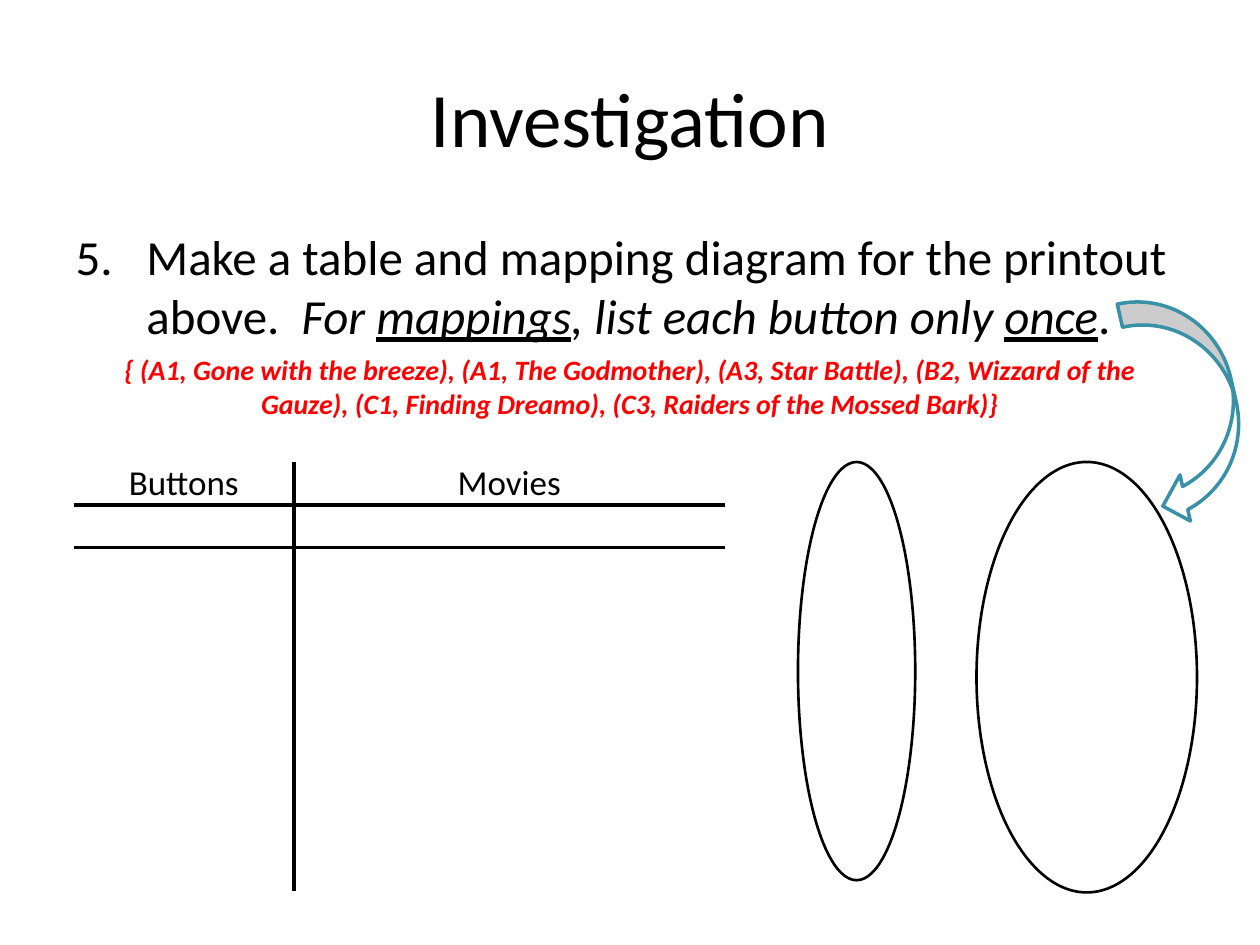
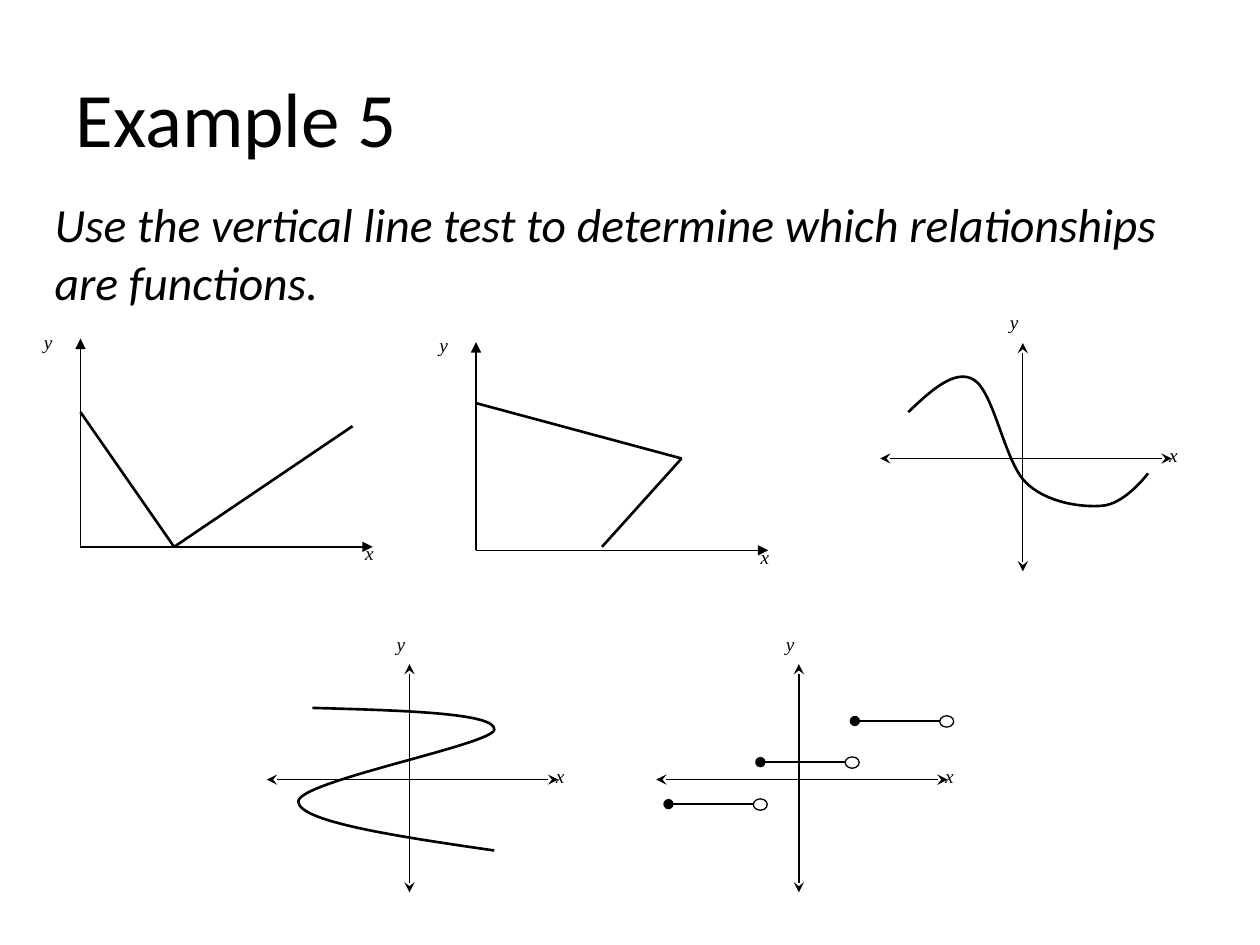
import pptx
import pptx.dml.color
import pptx.enum.shapes
import pptx.enum.text
import pptx.oxml
import pptx.oxml.ns
import pptx.util

Pt = pptx.util.Pt
RGB = pptx.dml.color.RGBColor.from_string
qn = pptx.oxml.ns.qn
SubElement = pptx.oxml.xmlchemy.OxmlElement
ALIGN = pptx.enum.text.PP_ALIGN
SHAPE = pptx.enum.shapes.MSO_SHAPE

COLORS = {"ink": "000000", "paper": "FFFFFF", "answer": "FF0000", "arrow": "3891A7"}
FONT = "Calibri"
MATH_FONT = "Times New Roman"


def add_line(s, x1, y1, x2, y2, width=0.75, head=None, tail=None):
    cn = s.shapes.add_connector(pptx.enum.shapes.MSO_CONNECTOR.STRAIGHT,
                                Pt(x1), Pt(y1), Pt(x2), Pt(y2))
    cn.line.width = Pt(width)
    cn.line.color.rgb = RGB(COLORS["ink"])
    ln = cn.line._get_or_add_ln()
    for tag, kind in (("a:headEnd", head), ("a:tailEnd", tail)):
        if kind:
            end = SubElement(tag)
            end.set("type", kind)
            ln.append(end)
    cn._element.spPr.append(SubElement("a:effectLst"))


def format_runs(p, size, font=FONT, color="ink", italic=None, bold=None):
    for r in p.runs:
        r.font.size = Pt(size)
        r.font.name = font
        r.font.color.rgb = RGB(COLORS[color])
        r.font.italic = italic
        r.font.bold = bold


prs = pptx.Presentation()
prs.slide_width, prs.slide_height = Pt(720), Pt(540)

# Shared title and body placeholders
slides = []
for title, align, body_box in (
    ("Investigation", ALIGN.CENTER, (36, 126, 648, 336)),
    ("Example 5", ALIGN.LEFT, (24, 108, 678, 60)),
):
    s = prs.slides.add_slide(prs.slide_layouts[1])
    s.shapes.title.text_frame.text = title
    body = s.placeholders[1]
    for sp, box in ((s.shapes.title, (36, 21.6, 648, 90)), (body, body_box)):
        sp.left, sp.top, sp.width, sp.height = [Pt(v) for v in box]
        sp.text_frame.auto_size = pptx.enum.text.MSO_AUTO_SIZE.NONE
    p = s.shapes.title.text_frame.paragraphs[0]
    p.alignment = align
    format_runs(p, 44)
    slides.append((s, body))

# Slide 1: numbered task
s, body = slides[0]
p = body.text_frame.paragraphs[0]
for text, italic, underline in (
    ("Make a table and mapping diagram for the printout above.  ", False, False),
    ("For ", True, False),
    ("mappings", True, True),
    (", list each button only ", True, False),
    ("once", True, True),
    (".", False, False),
):
    r = p.add_run()
    r.text = text
    r.font.underline = underline
format_runs(p, 28)
for r in p.runs[1:-1]:
    r.font.italic = True
pPr = p._p.get_or_add_pPr()
pPr.set("marL", str(Pt(40.5)))
pPr.set("indent", str(-Pt(40.5)))
bullet = SubElement("a:buFont")
bullet.set("typeface", "+mj-lt")
pPr.append(bullet)
bullet = SubElement("a:buAutoNum")
bullet.set("type", "arabicPeriod")
bullet.set("startAt", "5")
pPr.append(bullet)

# Empty mapping ovals
for x, w, h in ((456, 67, 239), (558, 126, 246)):
    sp = s.shapes.add_shape(SHAPE.OVAL, Pt(x), Pt(264), Pt(w), Pt(h))
    sp.shadow.inherit = False
    sp.fill.solid()
    sp.fill.fore_color.rgb = RGB(COLORS["paper"])
    sp.line.color.rgb = RGB(COLORS["ink"])
    sp.line.width = Pt(1.5)

# Buttons and movies table, ruled under the first two rows and between columns
ROWS, ROW_H = 10, 24.5
table = s.shapes.add_table(ROWS, 2, Pt(42), Pt(264), Pt(372), Pt(ROWS * ROW_H)).table
table.first_row = table.horz_banding = False
for col, width in zip(table.columns, (126, 246)):
    col.width = Pt(width)
for i, row in enumerate(table.rows):
    row.height = Pt(ROW_H)
    for j, cell in enumerate(row.cells):
        cell.margin_left = cell.margin_right = Pt(5)
        cell.margin_top = cell.margin_bottom = 0
        tcPr = cell._tc.get_or_add_tcPr()
        for side, ruled in (("L", j == 1), ("R", j == 0), ("T", i in (1, 2)), ("B", i in (0, 1))):
            ln = SubElement("a:ln" + side)
            ln.set("w", str(Pt(2.25)))
            fill = SubElement("a:solidFill" if ruled else "a:noFill")
            if ruled:
                clr = SubElement("a:srgbClr")
                clr.set("val", COLORS["ink"])
                fill.append(clr)
            ln.append(fill)
            tcPr.append(ln)
        cell.fill.background()
for cell, text in zip(table.rows[0].cells, ("Buttons", "Movies")):
    cell.text_frame.text = text
    p = cell.text_frame.paragraphs[0]
    p.alignment = ALIGN.CENTER
    format_runs(p, 20)

# Printout pairs
sp = s.shapes.add_textbox(Pt(60), Pt(198), Pt(600), Pt(68))
sp.text_frame.word_wrap = True
p = sp.text_frame.paragraphs[0]
p.text = ("{ (A1, Gone with the breeze), (A1, The Godmother), (A3, Star Battle), "
          "(B2, Wizzard of the Gauze), (C1, Finding Dreamo), "
          "(C3, Raiders of the Mossed Bark)}")
p.alignment = ALIGN.CENTER
p.space_before = Pt(3.2)
format_runs(p, 16, color="answer", italic=True, bold=True)

# Arrow from the hint to the ovals
sp = s.shapes.add_shape(SHAPE.CURVED_LEFT_ARROW, Pt(652.3), Pt(166.3), Pt(54), Pt(131.8))
sp.rotation = 347.3
sp.shadow.inherit = False
sp.fill.solid()
sp.fill.fore_color.rgb = RGB(COLORS["paper"])
sp.line.color.rgb = RGB(COLORS["arrow"])
sp.line.width = Pt(2)

# Slide 2: instruction
s, body = slides[1]
p = body.text_frame.paragraphs[0]
p.text = "Use the vertical line test to determine which relationships are functions."
format_runs(p, 27.2, italic=True)
pPr = p._p.get_or_add_pPr()
pPr.set("marL", "0")
pPr.set("indent", "0")
pPr.append(SubElement("a:buNone"))

# Axes: corner graphs have one arrow per axis, crossed graphs have two
labels = []
for x, y in ((46, 312.5), (272, 314.5)):
    add_line(s, x, y, x + 167, y, tail="triangle")
    add_line(s, x, y, x, y - 119, tail="triangle")
    labels += [("y", x - 28, y - 127.5), ("x", x + 155.5, y - 6.5)]
for x, y in ((584.5, 262), (234, 445.5), (456.5, 445.5)):
    add_line(s, x, y - 66, x, y + 64.5, head="stealth", tail="stealth")
    add_line(s, x + 85, y, x - 81.5, y, head="stealth", tail="stealth")
    labels += [("y", x - 14.5, y - 88), ("x", x + 76.5, y - 12.5)]
for text, x, y in labels:
    sp = s.shapes.add_textbox(Pt(x), Pt(y), Pt(29), Pt(30))
    sp.text_frame.word_wrap = True
    p = sp.text_frame.paragraphs[0]
    p.text = text
    p.space_after = Pt(10)
    format_runs(p, 11, font=MATH_FONT, italic=True)

# Graphs made of straight pieces
for points in (
    ((46, 235.5), (99.5, 312.5), (201.5, 243.5)),
    ((272.5, 230.5), (389.5, 262), (344, 312.5)),
):
    for start, end in zip(points, points[1:]):
        add_line(s, *start, *end, width=1.5)

# Curves: a start point, then three Bezier points for each piece
for points in (
    ((519, 235.5), (532, 223), (546, 210.5), (556.5, 217), (568, 224), (574, 263.5),
     (586, 275.5), (598, 287.5), (618.5, 290), (630, 289), (641.5, 288), (653, 274.5),
     (656, 270.5)),
    ((178.5, 404.5), (231, 406), (283.5, 407.5), (282.5, 417), (281.5, 425.5),
     (170.5, 446.5), (170.5, 458), (170.5, 469.5), (227, 478), (282.5, 486)),
):
    points = [(Pt(x), Pt(y)) for x, y in points]
    fb = s.shapes.build_freeform(*points[0])
    fb.add_line_segments(points[1:], close=False)
    sp = fb.convert_to_shape()
    segments = list(sp._element.iter(qn("a:lnTo")))
    for i in range(0, len(segments), 3):
        curve = SubElement("a:cubicBezTo")
        segments[i].addprevious(curve)
        for seg in segments[i:i + 3]:
            curve.append(seg[0])
            seg.getparent().remove(seg)
    sp.shadow.inherit = False
    sp.fill.background()
    sp.line.color.rgb = RGB(COLORS["ink"])
    sp.line.width = Pt(1.5)

# Step graph: closed left ends, open right ends
for x, y in ((382, 459.5), (434.5, 435.5), (488.5, 412)):
    add_line(s, x, y, x + 50, y, head="oval")
    sp = s.shapes.add_shape(SHAPE.OVAL, Pt(x + 48.5), Pt(y - 3), Pt(8), Pt(6.5))
    sp.shadow.inherit = False
    sp.fill.solid()
    sp.fill.fore_color.rgb = RGB(COLORS["paper"])
    sp.line.color.rgb = RGB(COLORS["ink"])
    sp.line.width = Pt(0.75)

prs.save("out.pptx")
